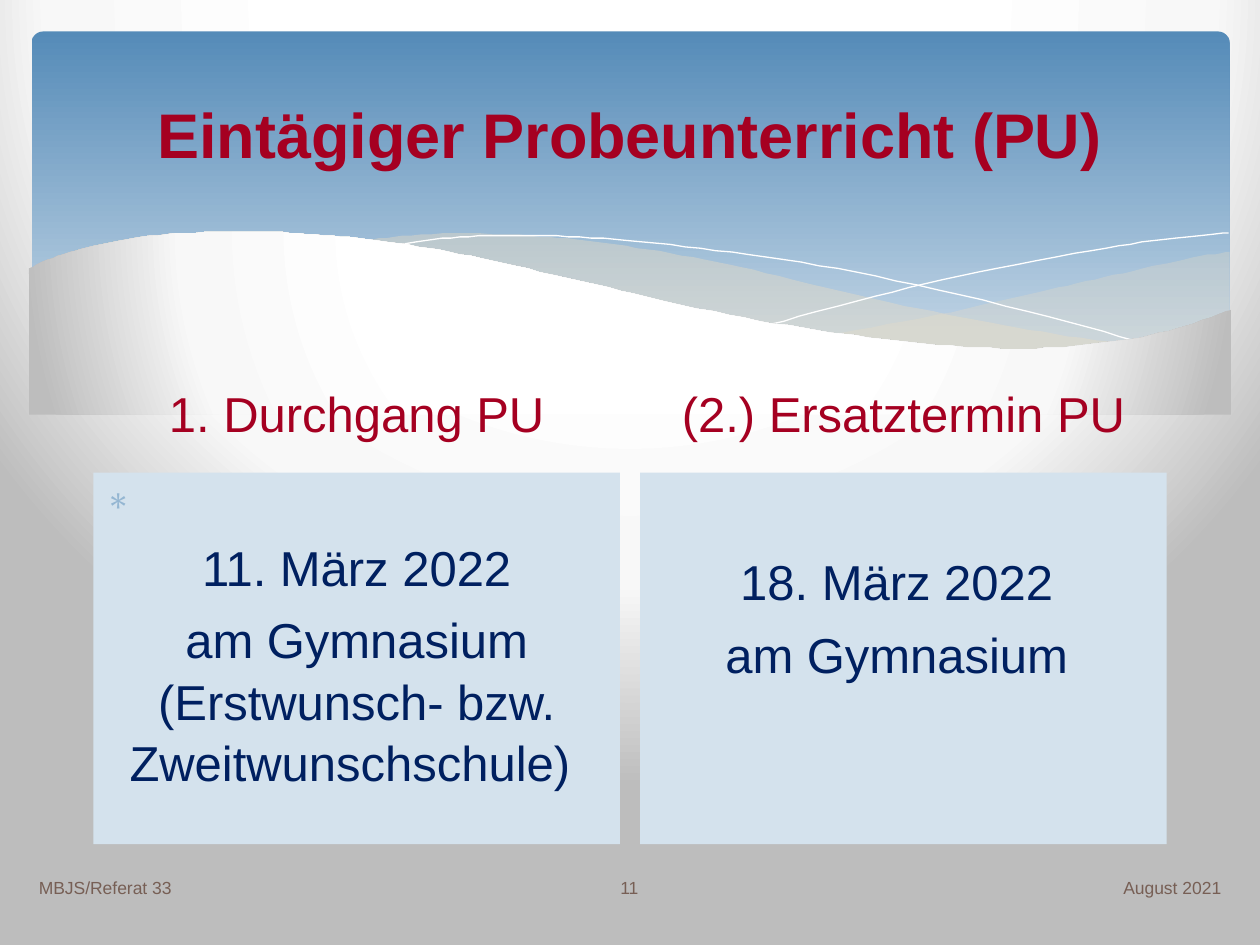
from dataclasses import dataclass

from lxml.etree import SubElement
from pptx import Presentation
from pptx.dml.color import RGBColor
from pptx.enum.shapes import MSO_SHAPE
from pptx.enum.text import MSO_ANCHOR, PP_ALIGN
from pptx.oxml import parse_xml
from pptx.oxml.ns import nsdecls, qn
from pptx.util import Pt

SCALE = 9144


@dataclass(frozen=True)
class Theme:
    """Colours, gradients and type sizes of the deck."""
    font: str = "Arial"
    red: str = "A50021"
    navy: str = "002060"
    brown: str = "775F55"
    bullet: str = "94B6D2"
    panel: str = "D4E2ED"
    sand: str = "EBDDC3"
    white: str = "FFFFFF"
    title_size: int = 36
    text_size: int = 28
    bullet_size: int = 20
    footer_size: int = 10
    banner_stops: tuple = ((0, "558BB8"), (90, "BFD3E4"))
    glow_stops: tuple = ((40, "FFFFFF"), (74, "F8F8F8"), (100, "BDBDBD"))
    banner_course: str = '<a:lin ang="5400000" scaled="0"/>'
    glow_course: str = ('<a:path path="circle"><a:fillToRect l="20000" t="-40000" '
                        'r="20000" b="140000"/></a:path>')


def smooth(knots, steps=6):
    """Return points on a Catmull-Rom curve through the knots."""
    padded = [knots[0], *knots, knots[-1]]
    points = []
    for a, b, c, d in zip(padded, padded[1:], padded[2:], padded[3:]):
        for step in range(steps):
            t = step / steps
            points.append(tuple(
                (2 * q + (r - p) * t + (2 * p - 5 * q + 4 * r - s) * t ** 2
                 + (3 * q - p - 3 * r + s) * t ** 3) / 2
                for p, q, r, s in zip(a, b, c, d)))
    return points + [knots[-1]]


class SlideBuilder:
    """Holds the theme and the current slide and draws each kind of element."""

    def __init__(self, slide, theme):
        self.slide = slide
        self.theme = theme

    def paint_gradient(self, fill, element, stops, course):
        fill.gradient()
        old = next(element.iter(qn("a:gradFill")))
        marks = "".join(f'<a:gs pos="{position * 1000}"><a:srgbClr val="{color}"/></a:gs>'
                        for position, color in stops)
        old.getparent().replace(old, parse_xml(
            f'<a:gradFill {nsdecls("a")} rotWithShape="1"><a:gsLst>{marks}</a:gsLst>'
            f'{course}</a:gradFill>'))

    def paint_glow(self, fill, element):
        self.paint_gradient(fill, element, self.theme.glow_stops, self.theme.glow_course)

    def background(self):
        self.paint_glow(self.slide.background.fill, self.slide.element)

    def shape(self, kind, left, top, width, height):
        shape = self.slide.shapes.add_shape(
            kind, *(value * SCALE for value in (left, top, width, height)))
        shape.shadow.inherit = False
        shape.line.fill.background()
        return shape

    def banner(self, left, top, width, height):
        shape = self.shape(MSO_SHAPE.ROUNDED_RECTANGLE, left, top, width, height)
        shape.adjustments[0] = 0.034
        self.paint_gradient(shape.fill, shape.element,
                            self.theme.banner_stops, self.theme.banner_course)

    def freeform(self, points, close):
        builder = self.slide.shapes.build_freeform(*points[0], scale=SCALE)
        builder.add_line_segments(points[1:], close=close)
        shape = builder.convert_to_shape()
        shape.shadow.inherit = False
        return shape

    def wave(self, points, color=None, opacity=100):
        shape = self.freeform(points, True)
        shape.line.fill.background()
        if color is None:
            self.paint_glow(shape.fill, shape.element)
            return
        shape.fill.solid()
        shape.fill.fore_color.rgb = RGBColor.from_string(color)
        SubElement(next(shape.element.iter(qn("a:srgbClr"))), qn("a:alpha"),
                   val=str(opacity * 1000))

    def strand(self, points):
        shape = self.freeform(points, False)
        shape.fill.background()
        shape.line.color.rgb = RGBColor.from_string(self.theme.white)
        shape.line.width = 0

    def style(self, para, text, size, color, align, bold=False):
        para.text = text
        para.alignment = align
        para.font.name = self.theme.font
        para.font.size = Pt(size)
        para.font.bold = bold
        para.font.color.rgb = RGBColor.from_string(color)

    def text(self, area, text, size, color, align=PP_ALIGN.CENTER, bold=False):
        box = self.slide.shapes.add_textbox(*(value * SCALE for value in area))
        frame = box.text_frame
        frame.word_wrap = True
        frame.vertical_anchor = MSO_ANCHOR.MIDDLE
        self.style(frame.paragraphs[0], text, size, color, align, bold)

    def bullet(self, para):
        self.style(para, " ", self.theme.bullet_size, self.theme.brown, PP_ALIGN.LEFT)
        properties = para._p.get_or_add_pPr()
        properties.set("marL", str(30 * SCALE))
        properties.set("indent", str(-30 * SCALE))
        tint = SubElement(properties, qn("a:buClr"))
        SubElement(tint, qn("a:srgbClr"), val=self.theme.bullet)
        SubElement(properties, qn("a:buChar"), char="∗")
        properties.append(properties.find(qn("a:defRPr")))

    def panel(self, area, lines, inset, starts_with_bullet):
        shape = self.shape(MSO_SHAPE.RECTANGLE, *area)
        shape.fill.solid()
        shape.fill.fore_color.rgb = RGBColor.from_string(self.theme.panel)
        frame = shape.text_frame
        frame.word_wrap = True
        frame.vertical_anchor = MSO_ANCHOR.TOP
        frame.margin_top = inset * SCALE
        texts = [None, *lines] if starts_with_bullet else lines
        for index, text in enumerate(texts):
            para = frame.add_paragraph() if index else frame.paragraphs[0]
            para.line_spacing = 1.04
            para.space_before = Pt(6.5 if index else 0)
            if text is None:
                self.bullet(para)
            else:
                self.style(para, text, self.theme.text_size, self.theme.navy, PP_ALIGN.CENTER)


def draw_waves(page, theme):
    """Draw the banner and the waves along its lower edge."""
    right_top = [(976, 200), (948, 204), (921, 210), (876, 220), (832, 230),
                 (779, 242), (729, 253), (661, 265)]
    right_bottom = [(661, 265), (705, 271), (757, 276), (803, 278), (854, 276),
                    (897, 270), (935, 262), (976, 247)]
    long_top = [(893, 273), (837, 265), (775, 254), (706, 240), (629, 222), (569, 208),
                (514, 198), (465, 191), (420, 187), (361, 185), (313, 188), (286, 191)]
    long_bottom = [(286, 191), (342, 199), (404, 211), (449, 222), (530, 240), (601, 255),
                   (665, 266), (722, 274), (785, 278), (838, 278), (893, 273)]
    falling = [(309, 195), (344, 190), (387, 187), (433, 187), (489, 190), (556, 197),
               (636, 208), (727, 226), (831, 251), (907, 272)]
    rising = [(613, 257), (695, 235), (776, 216), (866, 199), (924, 190), (975, 185)]
    edge = [(977, 246), (940, 259), (899, 269), (850, 275), (809, 277), (761, 275),
            (708, 270), (648, 262), (579, 250), (503, 233), (447, 220), (391, 207),
            (340, 197), (292, 190), (250, 186), (211, 184), (177, 184), (132, 186),
            (95, 191), (67, 197), (46, 203), (23, 213)]
    page.banner(25, 25, 951, 270)
    page.wave(smooth(right_top) + smooth(right_bottom), theme.sand, 29)
    page.wave(smooth(long_top) + smooth(long_bottom), theme.sand, 40)
    page.strand(smooth(falling))
    page.strand(smooth(rising))
    page.wave(smooth(edge) + [(23, 329), (977, 329)])


def main():
    """Build the slide and save it."""
    deck = Presentation()
    deck.slide_width, deck.slide_height = 1000 * SCALE, 750 * SCALE
    theme = Theme()
    page = SlideBuilder(deck.slides.add_slide(deck.slide_layouts[6]), theme)
    page.background()
    draw_waves(page, theme)
    page.text((50, 37, 900, 137), "Eintägiger Probeunterricht (PU)",
              theme.title_size, theme.red, bold=True)
    columns = [
        ("1. Durchgang PU",
         ["11. März 2022", "am Gymnasium (Erstwunsch- bzw. Zweitwunschschule) "], 6, True),
        ("(2.) Ersatztermin PU", ["18. März 2022 ", "am Gymnasium "], 61, False),
    ]
    for index, (heading, lines, inset, starts_with_bullet) in enumerate(columns):
        left = 74 + index * 434
        page.text((left, 293, 418, 70), heading, theme.text_size, theme.red)
        page.panel((left, 375, 418, 295), lines, inset, starts_with_bullet)
    footers = [(565, 414, "August 2021", PP_ALIGN.RIGHT),
               (21, 414, "MBJS/Referat 33", PP_ALIGN.LEFT),
               (436, 127, "11", PP_ALIGN.CENTER)]
    for left, width, text, align in footers:
        page.text((left, 684, width, 40), text, theme.footer_size, theme.brown, align)
    deck.save("out.pptx")


if __name__ == "__main__":
    main()
